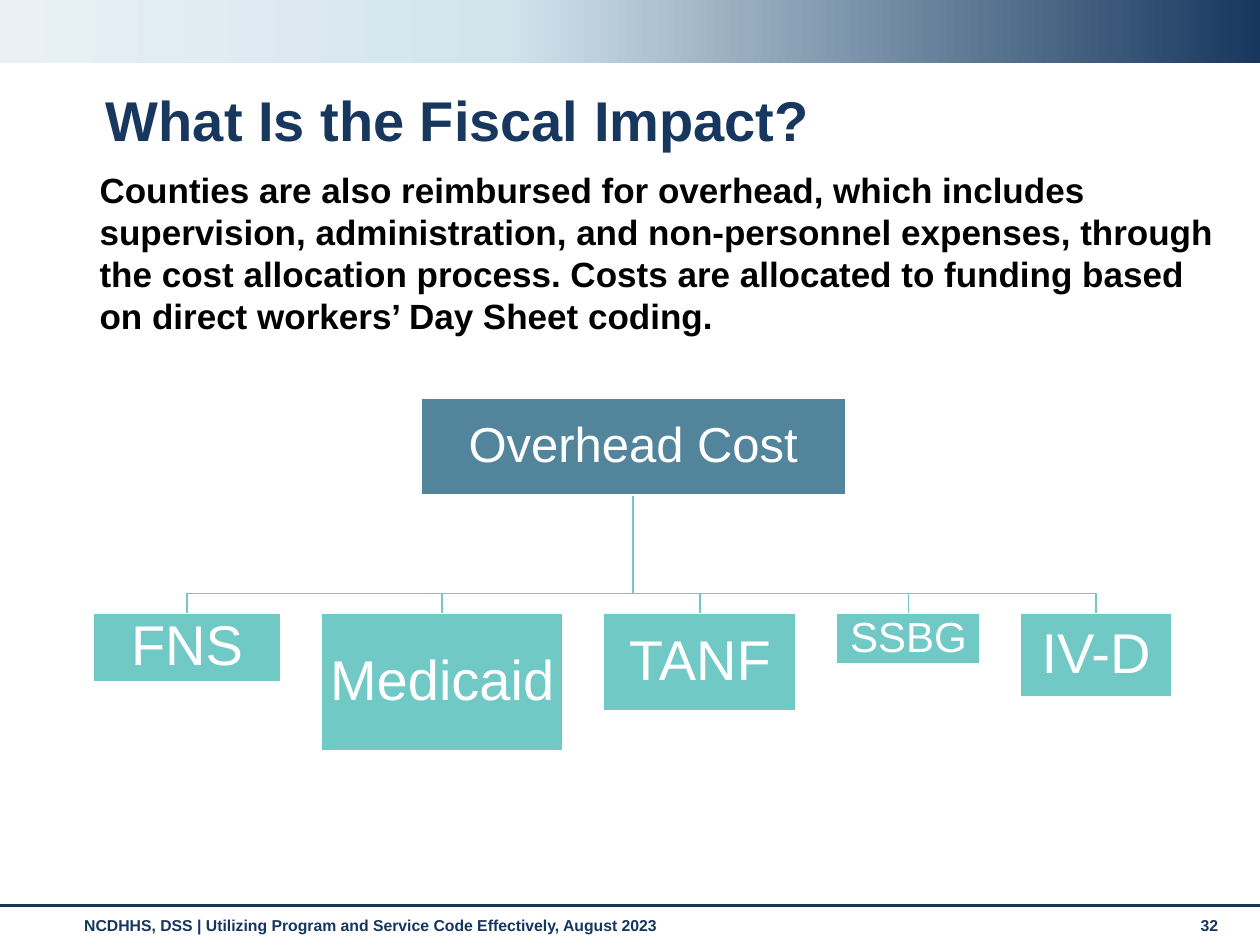
from copy import deepcopy

from lxml.etree import SubElement
from pptx import Presentation
from pptx.dml.color import RGBColor
from pptx.enum.shapes import MSO_CONNECTOR, MSO_SHAPE
from pptx.enum.text import MSO_ANCHOR, MSO_AUTO_SIZE, PP_ALIGN
from pptx.oxml.ns import qn
from pptx.util import Inches, Pt

COLS, ROWS = 100, 75
CELL = Inches(0.1)
NAVY, SKY, PALE = "17375E", "D3E4ED", "E9F1F6"
STEEL, TEAL, WHITE, BLACK = "52849C", "71C9C5", "FFFFFF", "000000"


def tint(code):
    return RGBColor.from_string(code)


def grid(*cells):
    return [round(cell * CELL) for cell in cells]


def write(shape, text, size=20, color=BLACK, bold=False, align=PP_ALIGN.LEFT,
          anchor=MSO_ANCHOR.TOP, line=1.0, inset=None):
    frame = shape.text_frame
    frame.word_wrap = True
    frame.auto_size = MSO_AUTO_SIZE.NONE
    frame.vertical_anchor = anchor
    if inset is not None:
        frame.margin_left = frame.margin_right = Inches(inset)
        frame.margin_top = frame.margin_bottom = Inches(inset)
    para = frame.paragraphs[0]
    para.alignment = align
    para.line_spacing = line
    run = para.add_run()
    run.text = text
    font = run.font
    font.name, font.size, font.bold = "Arial", Pt(size), bold
    font.color.rgb = tint(color)
    return para


class Page:
    def __init__(self, deck):
        self.slide = deck.slides.add_slide(deck.slide_layouts[1])
        self.shapes = self.slide.shapes

    def place(self, index, area, text, **style):
        holder = self.slide.placeholders[index]
        holder.left, holder.top, holder.width, holder.height = grid(*area)
        return write(holder, text, **style)

    def label(self, area, text, **style):
        write(self.shapes.add_textbox(*grid(*area)), text, **style)

    def block(self, area):
        shape = self.shapes.add_shape(MSO_SHAPE.RECTANGLE, *grid(*area))
        shape.shadow.inherit = False
        return shape

    def band(self, area, stops):
        shape = self.block(area)
        shape.line.fill.background()
        shape.fill.gradient()
        shape.fill.gradient_angle = 180
        first = next(shape._element.iter(qn("a:gs")))
        for _ in stops[2:]:
            first.addnext(deepcopy(first))
        for stop, (spot, color) in zip(shape.fill.gradient_stops, stops):
            stop.position = spot
            stop.color.rgb = tint(color)

    def node(self, area, text, size, fill):
        shape = self.block(area)
        shape.fill.solid()
        shape.fill.fore_color.rgb = tint(fill)
        shape.line.color.rgb = tint(WHITE)
        shape.line.width = Pt(1)
        write(shape, text, size=size, color=WHITE, align=PP_ALIGN.CENTER,
              anchor=MSO_ANCHOR.MIDDLE, line=0.9, inset=0.02)

    def rule(self, row):
        line = self.shapes.add_connector(
            MSO_CONNECTOR.STRAIGHT, *grid(0, row, COLS, row))
        line.line.color.rgb = tint(NAVY)
        line.line.width = Pt(1.75)
        SubElement(line._element.spPr, qn("a:effectLst"))

    def branch(self, start, bend, end):
        points = [start, (start[0], bend), (end[0], bend), end]
        path = [grid(*point) for point in points]
        build = self.shapes.build_freeform(*path[0])
        build.add_line_segments(path[1:], close=False)
        shape = build.convert_to_shape()
        shape.shadow.inherit = False
        shape.fill.background()
        shape.line.color.rgb = tint(TEAL)
        shape.line.width = Pt(1)


def main():
    deck = Presentation()
    deck.slide_width, deck.slide_height = grid(COLS, ROWS)
    page = Page(deck)

    # Header band and footer
    page.band((0, 0, COLS, 5), [(0, NAVY), (0.6, SKY), (1, PALE)])
    page.rule(71.9)
    foot = dict(size=9, color="15365E", bold=True)
    page.label((5.7, 72.2, 87.4, 2.9),
               "NCDHHS, DSS | Utilizing Program and Service Code "
               "Effectively, August 2023", **foot)
    page.label((94.3, 72.2, 4.4, 3), "32", **foot)

    # Title and body
    page.place(0, (7.4, 6.8, 85.8, 6), "What Is the Fiscal Impact?", size=32,
               color=NAVY, bold=True, anchor=MSO_ANCHOR.MIDDLE, line=0.9)
    body = page.place(
        1, (6.9, 12.9, 90.9, 52.4),
        "Counties are also reimbursed for overhead, which includes "
        "supervision, administration, and non-personnel expenses, through "
        "the cost allocation process. Costs are allocated to funding based "
        "on direct workers’ Day Sheet coding.", bold=True)
    body.space_before = Pt(12)
    props = body._p.get_or_add_pPr()
    props.set("marL", "0")
    props.set("indent", "0")
    SubElement(props, qn("a:buNone"))

    # Cost tree: children sit side by side with equal gaps
    funds = [("FNS", 14.9, 5.4, 32), ("Medicaid", 19.2, 10.9, 32),
             ("TANF", 15.3, 7.7, 32), ("SSBG", 11.4, 4, 24),
             ("IV-D", 12, 6.6, 32)]
    left, top, gap = 7.4, 48.7, 3.2
    root = (33.4, 31.6, 33.7, 7.7)
    start = (root[0] + root[2] / 2, root[1] + root[3])
    nodes = []
    for name, wide, high, size in funds:
        page.branch(start, 47.1, (left + wide / 2, top))
        nodes.append(((left, top, wide, high), name, size, TEAL))
        left += wide + gap
    for node in [(root, "Overhead Cost", 28, STEEL), *nodes]:
        page.node(*node)

    deck.save("out.pptx")


if __name__ == "__main__":
    main()
